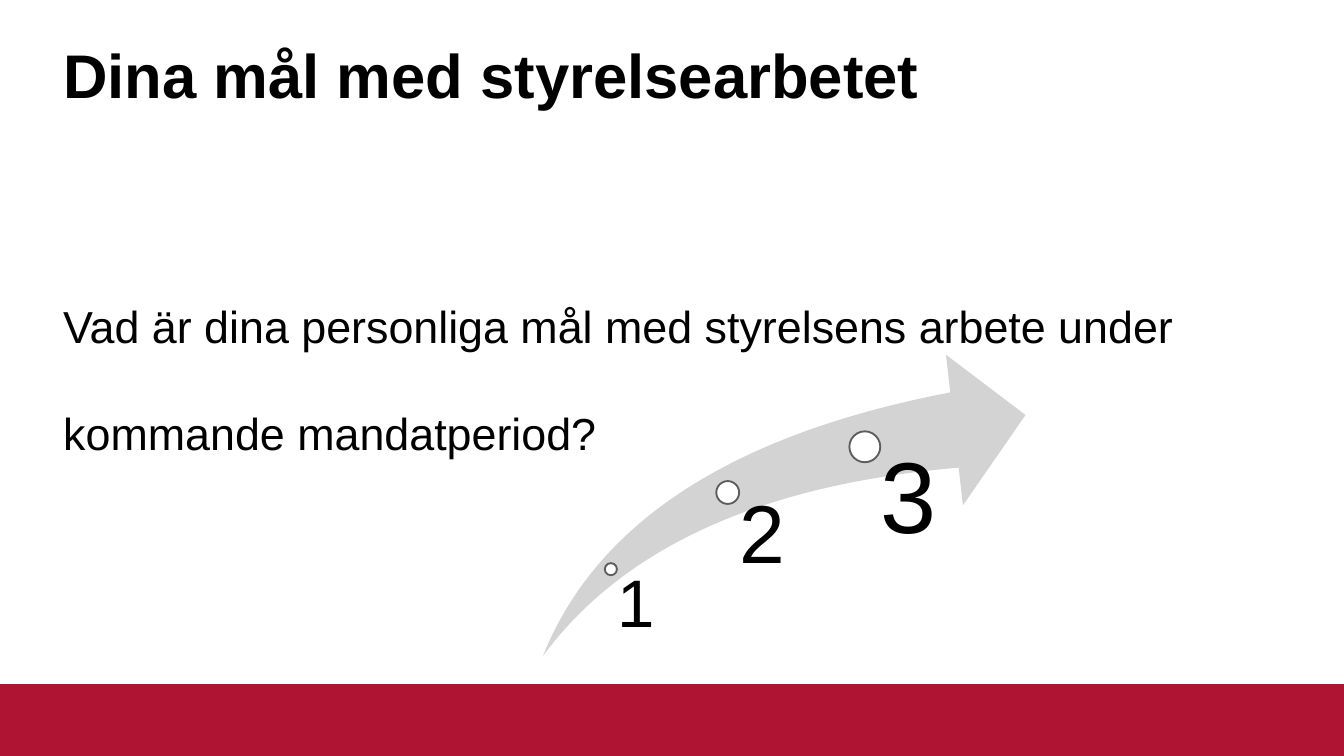
from dataclasses import dataclass

from lxml import etree
from pptx import Presentation
from pptx.dml.color import RGBColor
from pptx.enum.shapes import MSO_SHAPE
from pptx.enum.text import MSO_ANCHOR, MSO_AUTO_SIZE, PP_ALIGN
from pptx.oxml.ns import qn
from pptx.util import Inches, Pt

RECTANGLE = MSO_SHAPE.RECTANGLE
OVAL = MSO_SHAPE.OVAL
SWOOSH_ARROW = MSO_SHAPE.SWOOSH_ARROW
LEFT = PP_ALIGN.LEFT
TOP, MIDDLE = MSO_ANCHOR.TOP, MSO_ANCHOR.MIDDLE
NO_AUTOFIT = MSO_AUTO_SIZE.NONE


@dataclass(frozen=True)
class Theme:
    font: str = "Arial"
    text: RGBColor = RGBColor(0, 0, 0)
    band: RGBColor = RGBColor(0xAF, 0x14, 0x32)
    arrow: RGBColor = RGBColor(0xD3, 0xD3, 0xD3)
    dot: RGBColor = RGBColor(0xFF, 0xFF, 0xFF)
    dot_line: RGBColor = RGBColor(0x5D, 0x5D, 0x5D)
    title_size: int = 33
    body_size: int = 24


THEME = Theme()
SLIDE_WIDTH = 10
SLIDE_HEIGHT = SLIDE_WIDTH * 9 / 16
BAND_TOP = 5.09

# Dot left and top within the arrow box, dot diameter, label inset, label size
MILESTONES = [
    ("1", 0.46, 1.55, 0.09, 0.05, 36),
    ("2", 1.29, 0.94, 0.17, 0.09, 44),
    ("3", 2.28, 0.57, 0.23, 0.12, 54),
]


def place(shape, left, top, width, height):
    shape.left, shape.top = Inches(left), Inches(top)
    shape.width, shape.height = Inches(width), Inches(height)


def write(shape, text, size, anchor=TOP, insets=(0, 0), spacing=0.9, bold=False):
    """Fill the shape with one left-aligned paragraph; insets are left and top."""
    frame = shape.text_frame
    frame.text = text
    frame.word_wrap = True
    frame.auto_size = NO_AUTOFIT
    frame.vertical_anchor = anchor
    frame.margin_left, frame.margin_top = map(Inches, insets)
    frame.margin_right = frame.margin_bottom = 0
    paragraph = frame.paragraphs[0]
    paragraph.alignment = LEFT
    paragraph.line_spacing = spacing
    paragraph.space_before = Pt(0)
    font = paragraph.runs[0].font
    font.name, font.size, font.bold = THEME.font, Pt(size), bold
    font.color.rgb = THEME.text
    return paragraph


def add_filled(shapes, kind, box, fill, line=None):
    shape = shapes.add_shape(kind, *map(Inches, box))
    shape.shadow.inherit = False
    shape.fill.solid()
    shape.fill.fore_color.rgb = fill
    if line is None:
        shape.line.fill.background()
    else:
        shape.line.color.rgb = line
        shape.line.width = Pt(1)
    return shape


def add_title(slide, box):
    title = slide.shapes.title
    place(title, *box)
    write(title, "Dina mål med styrelsearbetet", THEME.title_size, MIDDLE, bold=True)


def add_question(slide, box):
    body = slide.placeholders[1]
    place(body, *box)
    paragraph = write(
        body,
        "Vad är dina personliga mål med styrelsens arbete under kommande mandatperiod?",
        THEME.body_size, insets=(0, 0.88), spacing=2,
    )
    properties = paragraph._p.get_or_add_pPr()
    properties.set("marL", "0")
    properties.set("indent", "0")
    etree.SubElement(properties, qn("a:buNone"))


def add_milestone_arrow(slide, box):
    left, top, _, height = box
    group = slide.shapes.add_group_shape()
    arrow = add_filled(group.shapes, SWOOSH_ARROW, box, THEME.arrow)
    arrow.adjustments[0] = arrow.adjustments[1] = 0.25
    for number, dot_left, dot_top, diameter, inset, size in MILESTONES:
        dot_box = (left + dot_left, top + dot_top, diameter, diameter)
        add_filled(group.shapes, OVAL, dot_box, THEME.dot, THEME.dot_line)
        center_x, center_y = dot_left + diameter / 2, dot_top + diameter / 2
        label_box = (left + center_x, top + center_y, 0.86, height - center_y)
        label = group.shapes.add_textbox(*map(Inches, label_box))
        write(label, number, size, insets=(inset, 0))


def main():
    presentation = Presentation()
    presentation.slide_width = Inches(SLIDE_WIDTH)
    presentation.slide_height = Inches(SLIDE_HEIGHT)
    slide = presentation.slides.add_slide(presentation.slide_layouts[1])
    band_box = (0, BAND_TOP, SLIDE_WIDTH, SLIDE_HEIGHT - BAND_TOP)
    add_filled(slide.shapes, RECTANGLE, band_box, THEME.band)
    add_title(slide, (0.47, 0.31, 9.06, 0.55))
    add_question(slide, (0.47, 0.94, 9.06, 4.06))
    add_milestone_arrow(slide, (4.04, 2.64, 3.59, 2.24))
    presentation.save("out.pptx")


if __name__ == "__main__":
    main()
